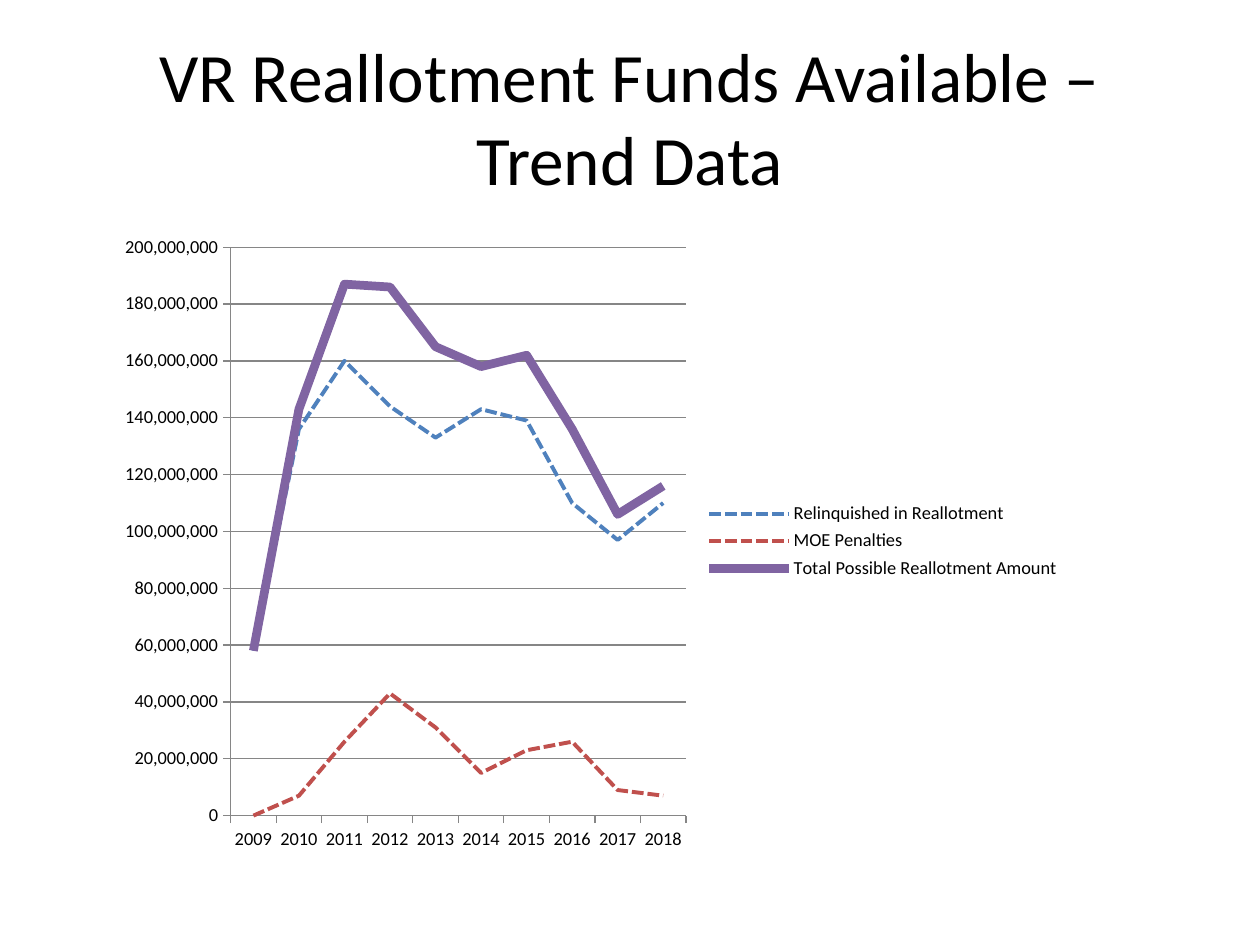
from lxml import etree
from pptx import Presentation
from pptx.chart.data import CategoryChartData
from pptx.dml.color import RGBColor
from pptx.enum import chart as ch, dml, text
from pptx.oxml import ns
from pptx.util import Pt

FONT = "Calibri"
COLORS = {"text": "000000", "axis": "868686", "relinquished": "4F81BD",
          "penalties": "C0504D", "total": "8064A2"}
YEARS = [str(year) for year in range(2009, 2019)]
# name, colour, line width, dash, amounts in millions
TRENDS = [
    ("Relinquished in Reallotment", "relinquished", 2.25, dml.MSO_LINE.SQUARE_DOT,
     [58, 136, 160, 144, 133, 143, 139, 110, 97, 110]),
    ("MOE Penalties", "penalties", 2.25, dml.MSO_LINE.SQUARE_DOT,
     [0, 7, 26, 43, 31, 15, 23, 26, 9, 7]),
    ("Total Possible Reallotment Amount", "total", 5, None,
     [58, 143, 187, 186, 165, 158, 162, 136, 106, 116]),
]


def rgb(name):
    return RGBColor.from_string(COLORS[name])


def set_all(target, **values):
    for name, value in values.items():
        setattr(target, name, value)


def style_font(font, size):
    set_all(font, name=FONT, size=Pt(size))
    font.color.rgb = rgb("text")


def style_line(line, color, width, dash=None):
    line.color.rgb = rgb(color)
    line.width = Pt(width)
    if dash is not None:
        line.dash_style = dash


def place_title(title, left, top, width, height):
    set_all(title, left=Pt(left), top=Pt(top), width=Pt(width), height=Pt(height))
    frame = title.text_frame
    frame.text = "VR Reallotment Funds Available –\vTrend Data"
    set_all(frame, word_wrap=True, auto_size=text.MSO_AUTO_SIZE.NONE,
            vertical_anchor=text.MSO_ANCHOR.MIDDLE)
    heading = frame.paragraphs[0]
    heading.alignment = text.PP_ALIGN.CENTER
    for run in heading.runs:
        style_font(run.font, 39.6)


def fix_plot_area(chart, **fractions):
    """Place the inner plot area at fractions (x, y, w, h) of the chart."""
    plot_area = chart.plots[0]._element.getparent()
    for old in plot_area.findall(ns.qn("c:layout")):
        plot_area.remove(old)
    layout = etree.Element(ns.qn("c:layout"))
    plot_area.insert(0, layout)
    manual = etree.SubElement(layout, ns.qn("c:manualLayout"))
    settings = {"layoutTarget": "inner", "xMode": "edge", "yMode": "edge", **fractions}
    for tag, value in settings.items():
        etree.SubElement(manual, ns.qn(f"c:{tag}")).set("val", str(value))


def add_trend_chart(slide, left, top, width, height):
    data = CategoryChartData(number_format="#,##0")
    data.categories = YEARS
    for name, _, _, _, millions in TRENDS:
        data.add_series(name, [amount * 1_000_000 for amount in millions])
    chart = slide.shapes.add_chart(ch.XL_CHART_TYPE.LINE, Pt(left), Pt(top),
                                   Pt(width), Pt(height), data).chart
    style_font(chart.font, 10.5)
    set_all(chart, has_title=False, has_legend=True)
    set_all(chart.legend, position=ch.XL_LEGEND_POSITION.RIGHT, include_in_layout=False)
    fix_plot_area(chart, x=0.13, y=0.04, w=0.47, h=0.89)

    plot = chart.plots[0]
    plot.vary_by_categories = False
    for series, (_, color, line_width, dash, _) in zip(plot.series, TRENDS):
        series.smooth = False
        series.marker.style = ch.XL_MARKER_STYLE.NONE
        style_line(series.format.line, color, line_width, dash)

    amounts = chart.value_axis
    set_all(amounts, minimum_scale=0, maximum_scale=200_000_000,
            major_unit=20_000_000, has_major_gridlines=True)
    set_all(amounts.tick_labels, number_format="#,##0", number_format_is_linked=False)
    style_line(amounts.major_gridlines.format.line, "axis", 0.75)
    for axis in (chart.category_axis, amounts):
        axis.major_tick_mark = ch.XL_TICK_MARK.OUTSIDE
        style_line(axis.format.line, "axis", 0.75)


def main():
    deck = Presentation()
    set_all(deck, slide_width=Pt(720), slide_height=Pt(540))
    slide = deck.slides.add_slide(deck.slide_layouts[5])
    place_title(slide.shapes.title, 36, 21.6, 648, 90)
    add_trend_chart(slide, 59.8, 126.7, 553.7, 365)
    deck.save("out.pptx")


if __name__ == "__main__":
    main()
